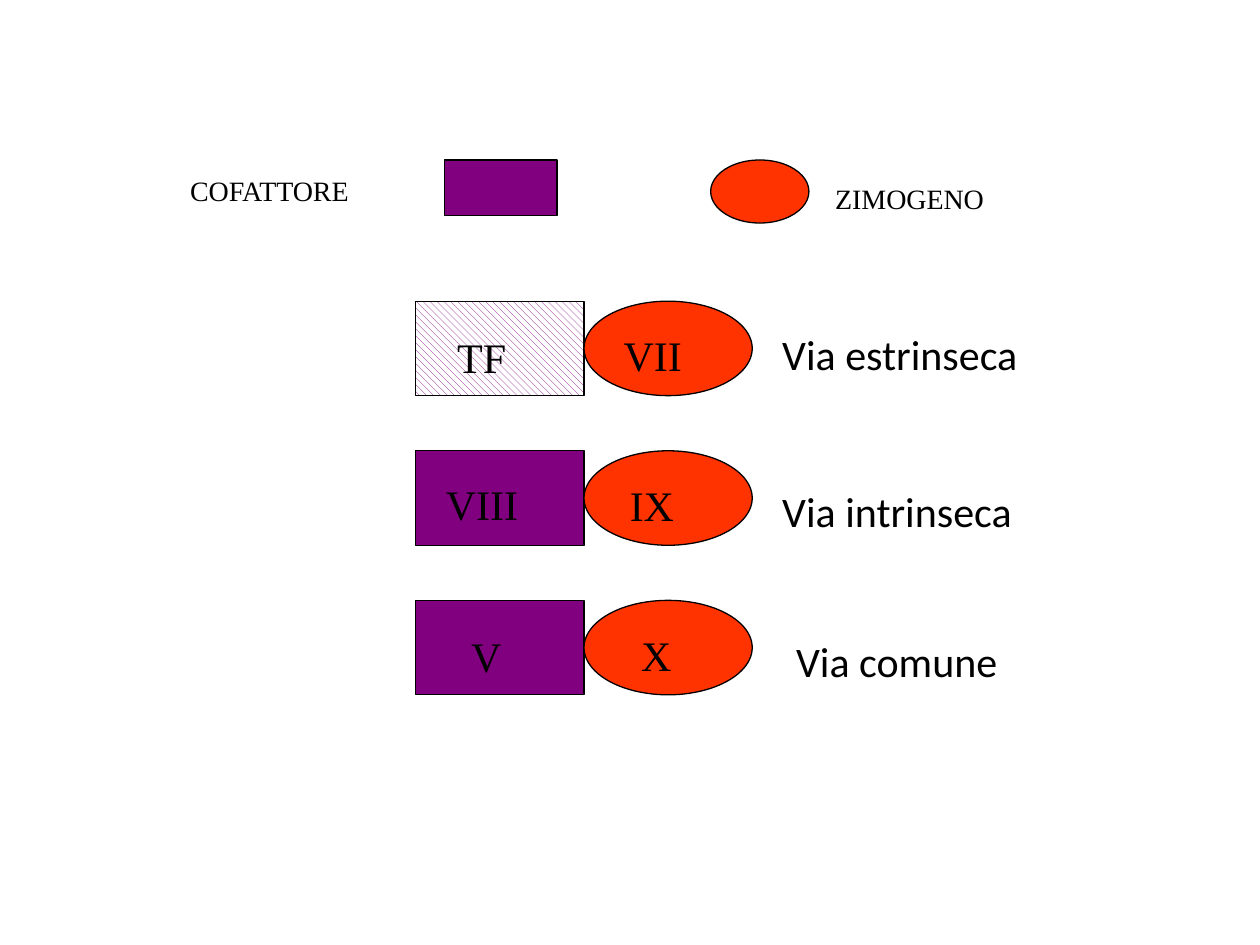
from dataclasses import dataclass
from typing import Any

from pptx import Presentation
from pptx.dml.color import RGBColor as Rgb
from pptx.enum.dml import MSO_PATTERN as Pattern
from pptx.enum.shapes import MSO_SHAPE as Kind
from pptx.enum.text import MSO_AUTO_SIZE as Fit
from pptx.util import Inches, Pt


@dataclass(frozen=True)
class Theme:
    purple: Rgb = Rgb(0x80, 0x00, 0x80)
    red: Rgb = Rgb(0xFF, 0x33, 0x00)
    black: Rgb = Rgb(0x00, 0x00, 0x00)
    white: Rgb = Rgb(0xFF, 0xFF, 0xFF)
    serif: str = "Times New Roman"
    sans: str = "Calibri"
    small: int = 16
    large: int = 24
    line: float = 0.75


# All lengths are percent of the slide's width or height
@dataclass(frozen=True)
class Box:
    x: float
    y: float
    w: float
    h: float


@dataclass(frozen=True)
class Label:
    text: str
    x: float
    drop: float  # below the top of its row
    w: float


@dataclass(frozen=True)
class Pair:
    factor: Label
    zymogen: Label
    path_name: Label
    hatched: bool = False


THEME = Theme()
WIDE, HIGH = Inches(10), Inches(7.5)

# Pathway grid: cofactor and zymogen touch, rows at an equal pitch
LEFT, TOP, PITCH = 33, 31.87, 15.83
CELL_W, CELL_H = 13.35, 10
KEY_TOP, KEY_H = 16.93, 3.73
TEXT_H = 5.07

PAIRS = [
    Pair(Label("TF", 35.3, 2.53, 7.9), Label("VII", 48.5, 2.4, 8.9),
         Label("Via estrinseca", 61.1, 2.27, 31.9), hatched=True),
    Pair(Label("VIII", 34.4, 2.27, 10.3), Label("IX", 49, 2.4, 7.4),
         Label("Via intrinseca", 61.1, 3.07, 31)),
    Pair(Label("V", 36.4, 2.53, 5.9), Label("X", 49.9, 2.4, 5.9),
         Label("Via comune", 62.2, 3.07, 25.6)),
]


def place(box: Box) -> tuple[int, int, int, int]:
    return (round(WIDE * box.x / 100), round(HIGH * box.y / 100),
            round(WIDE * box.w / 100), round(HIGH * box.h / 100))


def draw(group: Any, kind: Kind, box: Box, color: Rgb,
         hatched: bool = False) -> None:
    shape = group.shapes.add_shape(kind, *place(box))
    shape.shadow.inherit = False
    if hatched:
        shape.fill.patterned()
        shape.fill.pattern = Pattern.WIDE_DOWNWARD_DIAGONAL
        shape.fill.fore_color.rgb = color
        shape.fill.back_color.rgb = THEME.white
    else:
        shape.fill.solid()
        shape.fill.fore_color.rgb = color
    shape.line.color.rgb = THEME.black
    shape.line.width = Pt(THEME.line)


def write(group: Any, label: Label, top: float, height: float,
          font: str, size: int) -> None:
    box = Box(label.x, top + label.drop, label.w, height)
    frame = group.shapes.add_textbox(*place(box)).text_frame
    frame.text = label.text
    frame.word_wrap = False
    frame.auto_size = Fit.SHAPE_TO_FIT_TEXT
    style = frame.paragraphs[0].runs[0].font
    style.name, style.size = font, Pt(size)
    style.color.rgb = THEME.black


def draw_key(slide: Any) -> None:
    group = slide.shapes.add_group_shape()
    draw(group, Kind.RECTANGLE, Box(35.3, KEY_TOP, 8.9, 5.87), THEME.purple)
    draw(group, Kind.OVAL, Box(56.4, KEY_TOP, 7.8, 6.67), THEME.red)
    for label in (Label("COFATTORE", 14.1, 0.8, 20.1),
                  Label("ZIMOGENO", 65.3, 1.6, 18.4)):
        write(group, label, KEY_TOP, KEY_H, THEME.serif, THEME.small)


def draw_pair(slide: Any, pair: Pair, row: int) -> None:
    top = TOP + row * PITCH
    group = slide.shapes.add_group_shape()
    draw(group, Kind.RECTANGLE, Box(LEFT, top, CELL_W, CELL_H),
         THEME.purple, pair.hatched)
    draw(group, Kind.OVAL, Box(LEFT + CELL_W, top, CELL_W, CELL_H), THEME.red)
    for label, font in ((pair.factor, THEME.serif),
                        (pair.zymogen, THEME.serif),
                        (pair.path_name, THEME.sans)):
        write(group, label, top, TEXT_H, font, THEME.large)


def main() -> None:
    deck = Presentation()
    deck.slide_width, deck.slide_height = WIDE, HIGH
    slide = deck.slides.add_slide(deck.slide_layouts[6])

    # Key to the two shapes
    draw_key(slide)

    # One row for each pathway
    for row, pair in enumerate(PAIRS):
        draw_pair(slide, pair, row)

    deck.save("out.pptx")


if __name__ == "__main__":
    main()
